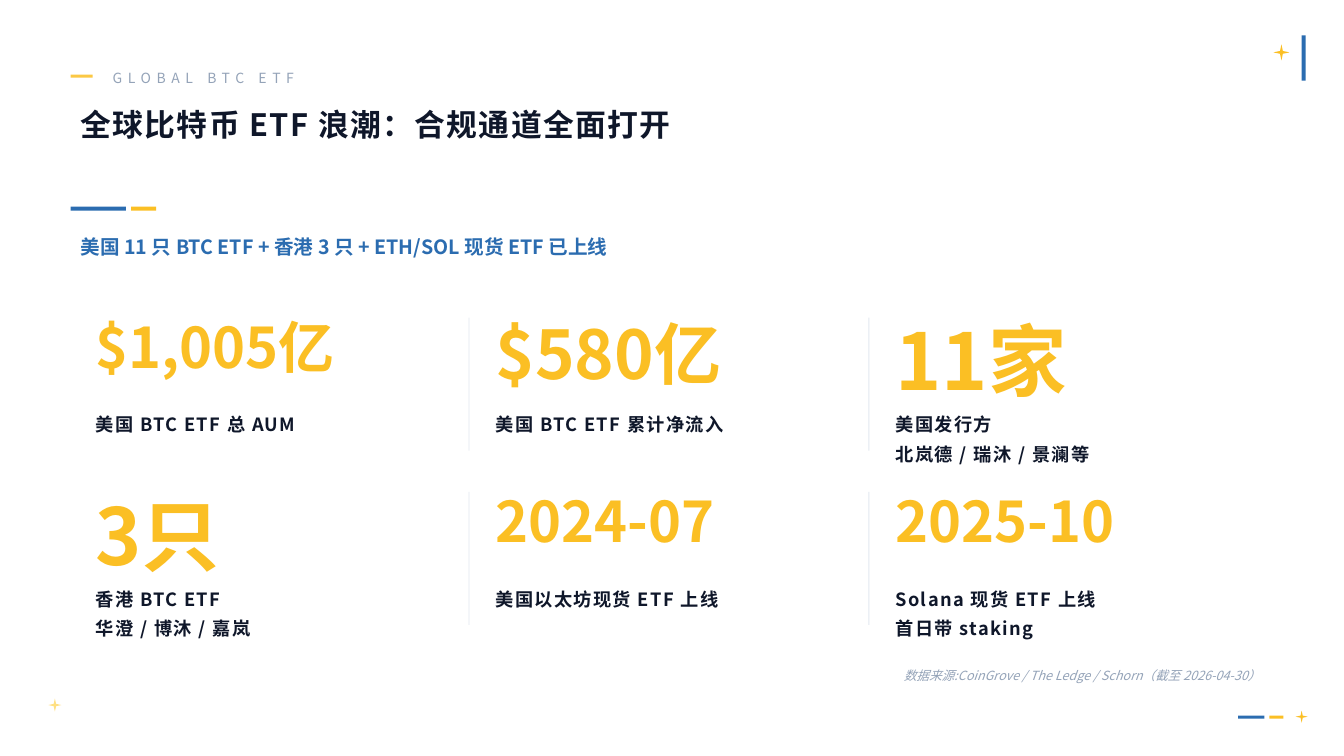
from lxml.etree import SubElement
from pptx import Presentation
from pptx.dml.color import RGBColor
from pptx.enum.shapes import MSO_SHAPE
from pptx.enum.text import MSO_ANCHOR, MSO_AUTO_SIZE, PP_ALIGN
from pptx.oxml.ns import qn
from pptx.util import Inches, Pt


class Theme:
    font = "Noto Sans CJK JP"
    blue = RGBColor.from_string("2B6CB0")
    gold = RGBColor.from_string("FBBF24")
    pale = RGBColor.from_string("FFE082")
    ink = RGBColor.from_string("0F172A")
    grey = RGBColor.from_string("94A3B8")
    rule = RGBColor.from_string("E2E8F0")
    tag = {"size": Pt(10)}
    title = {"size": Pt(22), "bold": True}
    lead = {"size": Pt(14), "bold": True}
    label = {"size": Pt(13), "bold": True}
    note = {"size": Pt(9), "italic": True}


def add_mark(kind, color, *place):
    mark = slide.shapes.add_shape(kind, *map(Inches, place))
    mark.shadow.inherit = False
    mark.fill.solid()
    mark.fill.fore_color.rgb = color
    mark.line.fill.background()
    return mark


def put_text(box, place, text, style, color, anchor=MSO_ANCHOR.TOP,
             align=PP_ALIGN.LEFT, track=0, leading=None):
    """Place the box and write one paragraph per line; track is in points."""
    for side, value in zip(("left", "top", "width", "height"), place):
        setattr(box, side, Inches(value))
    frame = box.text_frame
    frame.word_wrap = True
    frame.auto_size = MSO_AUTO_SIZE.NONE
    frame.vertical_anchor = anchor
    frame.text = text
    for para in frame.paragraphs:
        para.alignment = align
        para.line_spacing = leading
        run = para.runs[0]
        for name, value in {"name": Theme.font, **style}.items():
            setattr(run.font, name, value)
        run.font.color.rgb = color
        props = run.font._element
        SubElement(props, qn("a:ea"), typeface=Theme.font)
        if track:
            props.set("spc", str(track * 100))


deck = Presentation()
deck.slide_width, deck.slide_height = Inches(13.33), Inches(7.5)
slide = deck.slides.add_slide(deck.slide_layouts[5])
shapes = slide.shapes
bar, star = MSO_SHAPE.RECTANGLE, MSO_SHAPE.STAR_4_POINT

# Corner marks and heading bars
for kind, color, *place in (
    (bar, Theme.blue, 12.91, 0.35, 0.04, 0.45),
    (star, Theme.gold, 12.63, 0.44, 0.16, 0.16),
    (bar, Theme.blue, 12.28, 7.1, 0.26, 0.03),
    (bar, Theme.gold, 12.59, 7.1, 0.14, 0.03),
    (star, Theme.gold, 12.85, 7.05, 0.12, 0.12),
    (star, Theme.pale, 0.48, 6.93, 0.13, 0.13),
    (bar, Theme.blue, 0.7, 2.05, 0.55, 0.04),
    (bar, Theme.gold, 1.3, 2.05, 0.25, 0.04),
):
    add_mark(kind, color, *place)
dash = add_mark(bar, Theme.gold, 0.7, 0.74, 0.22, 0.03)
tint = dash._element.spPr.find(qn("a:solidFill"))[0]
SubElement(tint, qn("a:alpha"), val="85000")

# Heading and source line
blank = (0, 0, 0, 0)
put_text(shapes.add_textbox(*blank), (1.02, 0.62, 8, 0.3), "GLOBAL BTC ETF",
         Theme.tag, Theme.grey, MSO_ANCHOR.MIDDLE, track=4)
put_text(shapes.title, (0.7, 1, 12, 1), "全球比特币 ETF 浪潮：合规通道全面打开",
         Theme.title, Theme.ink, track=1)
put_text(shapes.add_textbox(*blank), (0.7, 2.25, 11.9, 0.4),
         "美国 11 只 BTC ETF + 香港 3 只 + ETH/SOL 现货 ETF 已上线",
         Theme.lead, Theme.blue, MSO_ANCHOR.MIDDLE)
put_text(shapes.add_textbox(*blank), (0.7, 6.5, 11.9, 0.4),
         "数据来源:CoinGrove / The Ledge / Schorn（截至 2026-04-30）",
         Theme.note, Theme.grey, MSO_ANCHOR.MIDDLE, PP_ALIGN.RIGHT)

# Grid of key figures, three to a row
facts = (
    ("$1,005亿", 40, "美国 BTC ETF 总 AUM"),
    ("$580亿", 48, "美国 BTC ETF 累计净流入"),
    ("11家", 56, "美国发行方\n北岚德 / 瑞沐 / 景澜等"),
    ("3只", 56, "香港 BTC ETF\n华澄 / 博沐 / 嘉岚"),
    ("2024-07", 40, "美国以太坊现货 ETF 上线"),
    ("2025-10", 40, "Solana 现货 ETF 上线\n首日带 staking"),
)
columns, pitch, step = 3, 11.9 / 3, 1.73
width = pitch - 0.3
for index, (figure, size, label) in enumerate(facts):
    row, column = divmod(index, columns)
    left, top = 0.85 + column * pitch, 3.05 + row * step
    if column:
        add_mark(bar, Theme.rule, left - 0.17, top + 0.1, 0.01, 1.32)
    put_text(shapes.add_textbox(*blank), (left, top, width, 0.95), figure,
             {"size": Pt(size), "bold": True}, Theme.gold)
    put_text(shapes.add_textbox(*blank), (left, top + 0.93, width, 0.69), label,
             Theme.label, Theme.ink, track=1, leading=1.35)

deck.save("out.pptx")
